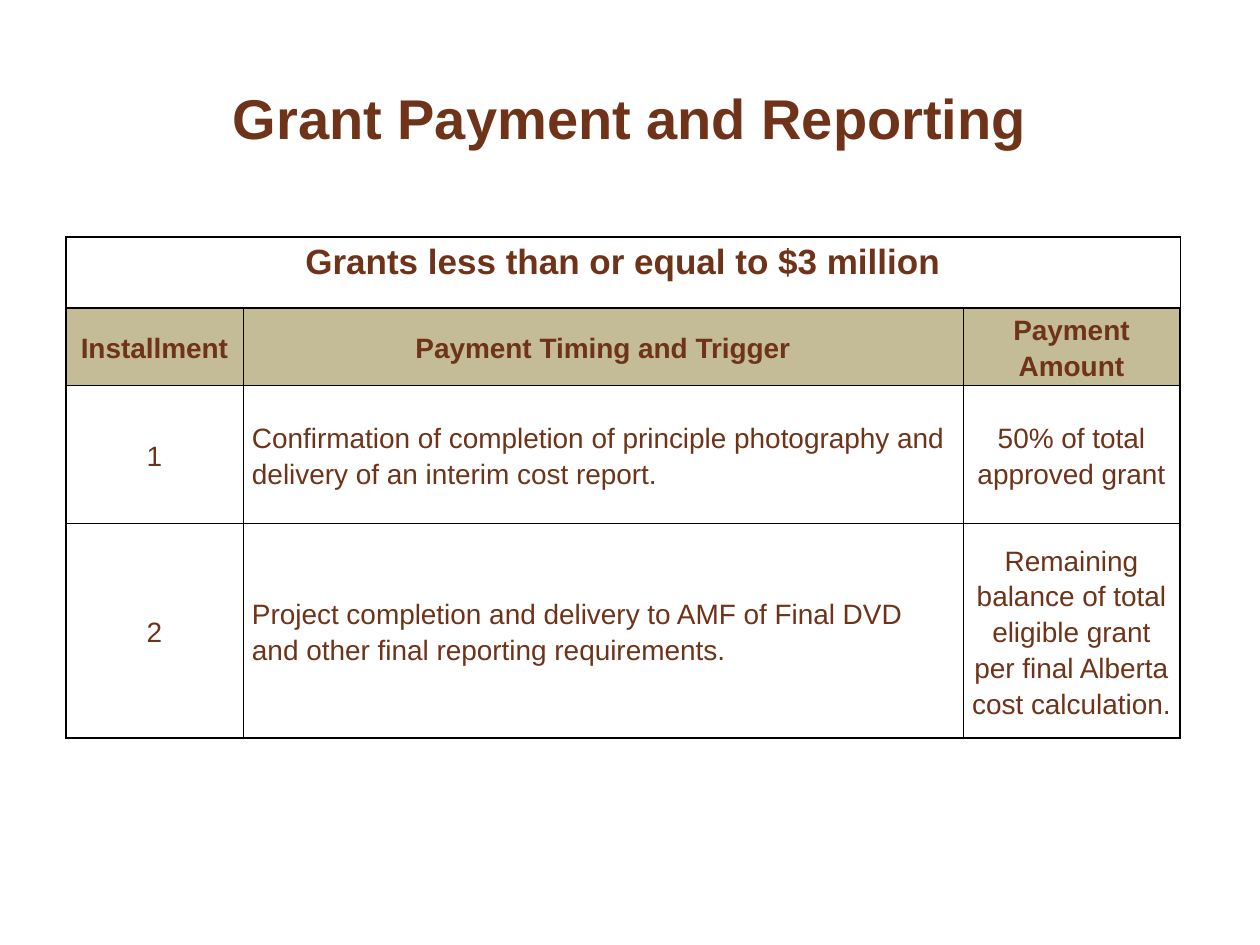
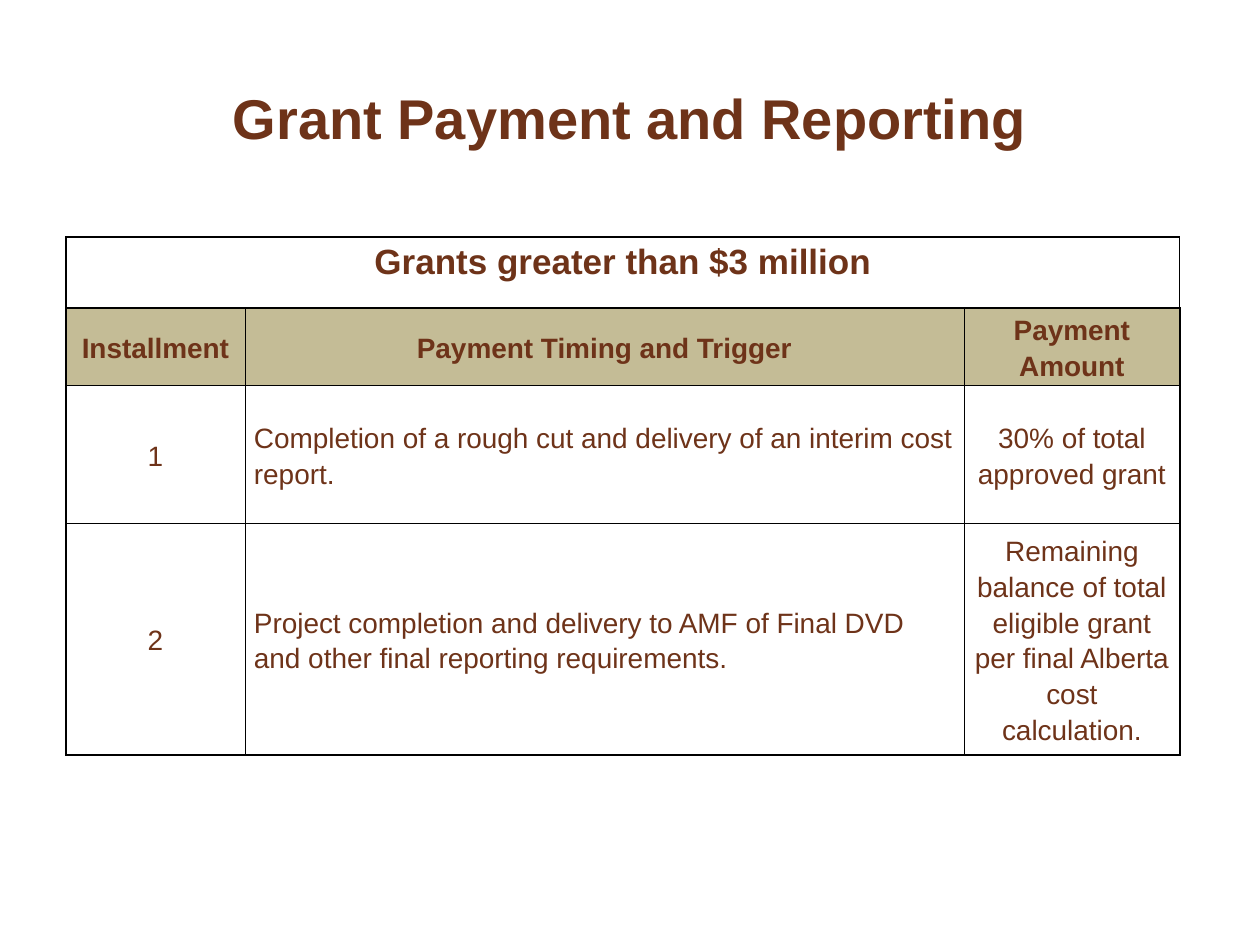
import pptx
import pptx.dml.color
import pptx.enum.text
import pptx.oxml.ns
import pptx.util
from dataclasses import dataclass
from lxml import etree

PX = 914400 // 126
ALIGN = pptx.enum.text.PP_ALIGN
ANCHOR = pptx.enum.text.MSO_ANCHOR


@dataclass(frozen=True)
class Theme:
    font: str = "Arial"
    text: str = "6E3319"
    header_fill: str = "C4BC96"
    border: str = "000000"
    title_size: int = 32
    caption_size: int = 20
    body_size: int = 16
    outer_line: float = 1
    inner_line: float = 0.5


THEME = Theme()
TITLE = "Grant Payment and Reporting"
HEADINGS = ["Installment", "Payment Timing and Trigger", "Payment Amount"]
FINAL_INSTALLMENT = [
    "2",
    "Project completion and delivery to AMF of Final DVD and other final reporting requirements.",
    "Remaining balance of total eligible grant per final Alberta cost calculation.",
]
ROW_HEIGHTS = [71, 71, 138, 215]


def px(length):
    return pptx.util.Emu(length * PX)


def write(frame, text, *, size, bold=False, align=ALIGN.CENTER, line_spacing=1.0):
    frame.word_wrap = True
    paragraph = frame.paragraphs[0]
    paragraph.alignment = align
    paragraph.line_spacing = line_spacing
    run = paragraph.add_run()
    run.text = text
    run.font.name = THEME.font
    run.font.size = pptx.util.Pt(size)
    run.font.bold = bold
    run.font.color.rgb = pptx.dml.color.RGBColor.from_string(THEME.text)


def add_title(slide, text):
    box = slide.shapes.add_textbox(px(63), px(38), px(1134), px(158))
    box.text_frame.vertical_anchor = ANCHOR.MIDDLE
    write(box.text_frame, text, size=THEME.title_size, bold=True)


def set_border(cell, side, width):
    qn = pptx.oxml.ns.qn
    properties = cell._tc.get_or_add_tcPr()
    line = etree.SubElement(properties, qn(f"a:ln{side}"), w=str(pptx.util.Pt(width)))
    fill = etree.SubElement(line, qn("a:solidFill"))
    etree.SubElement(fill, qn("a:srgbClr"), val=THEME.border)


def style_cell(cell, row, column, last_row, last_column):
    cell.margin_left = cell.margin_right = px(9)
    cell.margin_top = cell.margin_bottom = 0
    cell.vertical_anchor = ANCHOR.TOP if row == 0 else ANCHOR.MIDDLE

    # The frame and the caption row have the heavier line
    heavy_sides = {
        "L": column == 0,
        "R": column == last_column,
        "T": row <= 1,
        "B": row in (0, last_row),
    }
    for side, heavy in heavy_sides.items():
        set_border(cell, side, THEME.outer_line if heavy else THEME.inner_line)

    if row == 1:
        cell.fill.solid()
        cell.fill.fore_color.rgb = pptx.dml.color.RGBColor.from_string(THEME.header_fill)
    else:
        cell.fill.background()


def add_payment_table(slide, caption, first_installment, column_widths):
    rows = [[caption, "", ""], HEADINGS, first_installment, FINAL_INSTALLMENT]
    frame = slide.shapes.add_table(
        len(rows), len(HEADINGS), px(66), px(237),
        px(sum(column_widths)), px(sum(ROW_HEIGHTS)))
    table = frame.table
    table.first_row = table.horz_banding = False
    for column, width in zip(table.columns, column_widths):
        column.width = px(width)
    for row, height in zip(table.rows, ROW_HEIGHTS):
        row.height = px(height)
    table.cell(0, 0).merge(table.cell(0, len(HEADINGS) - 1))

    for row, texts in enumerate(rows):
        for column, text in enumerate(texts):
            cell = table.cell(row, column)
            style_cell(cell, row, column, len(rows) - 1, len(texts) - 1)
            if text:
                is_description = row > 1 and column == 1
                write(cell.text_frame, text,
                      size=THEME.caption_size if row == 0 else THEME.body_size,
                      bold=row <= 1,
                      align=ALIGN.LEFT if is_description else ALIGN.CENTER,
                      line_spacing=1.15)


def add_grant_slide(presentation, caption, first_installment, column_widths):
    slide = presentation.slides.add_slide(presentation.slide_layouts[6])
    add_title(slide, TITLE)
    add_payment_table(slide, caption, first_installment, column_widths)


def main():
    presentation = pptx.Presentation()
    presentation.slide_width = pptx.util.Inches(10)
    presentation.slide_height = pptx.util.Inches(7.5)

    # Smaller grants
    add_grant_slide(
        presentation,
        "Grants less than or equal to $3 million",
        ["1",
         "Confirmation of completion of principle photography and delivery of an interim cost report.",
         "50% of total approved grant"],
        [177, 720, 217])

    # Larger grants
    add_grant_slide(
        presentation,
        "Grants greater than $3 million",
        ["1",
         "Completion of a rough cut and delivery of an interim cost report.",
         "30% of total approved grant"],
        [179, 719, 216])

    presentation.save("out.pptx")


if __name__ == "__main__":
    main()
